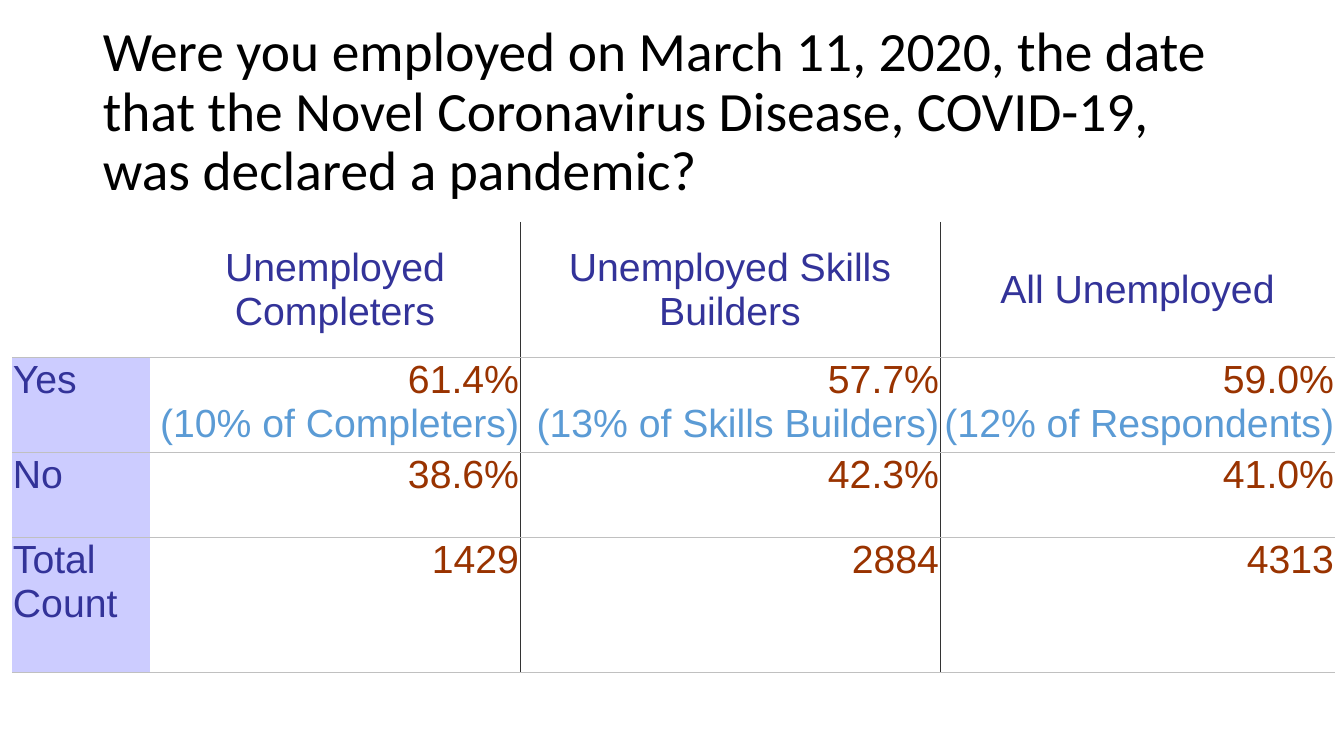
from lxml.etree import SubElement
from pptx import Presentation
from pptx.dml.color import RGBColor
from pptx.enum.text import MSO_ANCHOR as Anchor, PP_ALIGN as Align
from pptx.oxml.ns import qn
from pptx.util import Emu, Pt

PX_PER_INCH = 100.8
INK, NAVY, RUST, SKY = "000000", "333399", "993300", "5B9BD5"
LAVENDER, WHITE, SILVER, CHARCOAL = "CCCCFF", "FFFFFF", "C0C0C0", "333333"

TITLE = ("Were you employed on March 11, 2020, the date that the Novel "
         "Coronavirus Disease, COVID-19, was declared a pandemic?")
ROWS = [
    ["", "Unemployed Completers", "Unemployed Skills Builders", "All Unemployed"],
    ["Yes", "61.4%\n(10% of Completers)", "57.7%\n(13% of Skills Builders)",
     "59.0%\n(12% of Respondents)"],
    ["No", "38.6%", "42.3%", "41.0%"],
    ["Total Count", "1429", "2884", "4313"],
]
COLUMN_WIDTHS = [138, 370, 420, 395]
ROW_HEIGHTS = [135, 85, 85, 135]


def px(length):
    return Emu(round(length * 914400 / PX_PER_INCH))


def color(value):
    return RGBColor.from_string(value)


class SurveySlide:
    title_font, title_size = "Calibri", 39.6
    table_font, table_size = "Arial", 28

    def __init__(self, presentation):
        self.slide = presentation.slides.add_slide(presentation.slide_layouts[6])

    def format_runs(self, paragraph, font, size, value):
        for run in paragraph.runs:
            run.font.name, run.font.size = font, Pt(size)
            run.font.color.rgb = color(value)

    def title(self, text, left, top, width, height):
        box = self.slide.shapes.add_textbox(px(left), px(top), px(width), px(height))
        frame = box.text_frame
        frame.word_wrap = True
        frame.vertical_anchor = Anchor.MIDDLE
        frame.text = text
        frame.paragraphs[0].line_spacing = 0.9
        self.format_runs(frame.paragraphs[0], self.title_font, self.title_size, INK)

    def table(self, rows, left, top, widths, heights):
        frame = self.slide.shapes.add_table(len(rows), len(widths), px(left), px(top),
                                            px(sum(widths)), px(sum(heights)))
        table = frame.table
        table.first_row = table.horz_banding = False
        for column, width in zip(table.columns, widths):
            column.width = px(width)
        for row, height in zip(table.rows, heights):
            row.height = px(height)
        for row_index, row in enumerate(rows):
            for column_index, text in enumerate(row):
                self.cell(table.cell(row_index, column_index), text,
                          row_index == 0, column_index, len(widths) - 1)

    def cell(self, cell, text, is_header, column_index, last_column):
        is_label = column_index == 0
        cell.margin_left = cell.margin_right = cell.margin_top = px(1)
        cell.margin_bottom = 0
        cell.vertical_anchor = Anchor.MIDDLE if is_header else Anchor.TOP

        # Vertical rules separate the answer columns; grey rules close each row
        self.border(cell, "L", CHARCOAL if column_index > 1 else None)
        self.border(cell, "R", CHARCOAL if 0 < column_index < last_column else None)
        self.border(cell, "T", None if is_header else SILVER)
        self.border(cell, "B", SILVER)
        cell.fill.solid()
        cell.fill.fore_color.rgb = color(LAVENDER if is_label and not is_header else WHITE)

        # The first line holds the value, the second its share
        cell.text_frame.text = text
        for index, paragraph in enumerate(cell.text_frame.paragraphs):
            if is_header:
                paragraph.alignment = Align.CENTER
            else:
                paragraph.alignment = Align.LEFT if is_label else Align.RIGHT
            value = NAVY if is_header or is_label else (RUST, SKY)[index]
            self.format_runs(paragraph, self.table_font, self.table_size, value)

    def border(self, cell, side, value):
        properties = cell._tc.get_or_add_tcPr()
        line = SubElement(properties, qn(f"a:ln{side}"), w=str(Pt(0.5)))
        if value is None:
            SubElement(line, qn("a:noFill"))
        else:
            SubElement(SubElement(line, qn("a:solidFill")), qn("a:srgbClr"), val=value)


def main():
    presentation = Presentation()
    presentation.slide_width, presentation.slide_height = px(1344), px(756)
    survey = SurveySlide(presentation)
    # Question
    survey.title(TITLE, 93, 40, 1159, 146)
    # Answers
    survey.table(ROWS, 12, 222, COLUMN_WIDTHS, ROW_HEIGHTS)
    presentation.save("out.pptx")


if __name__ == "__main__":
    main()
